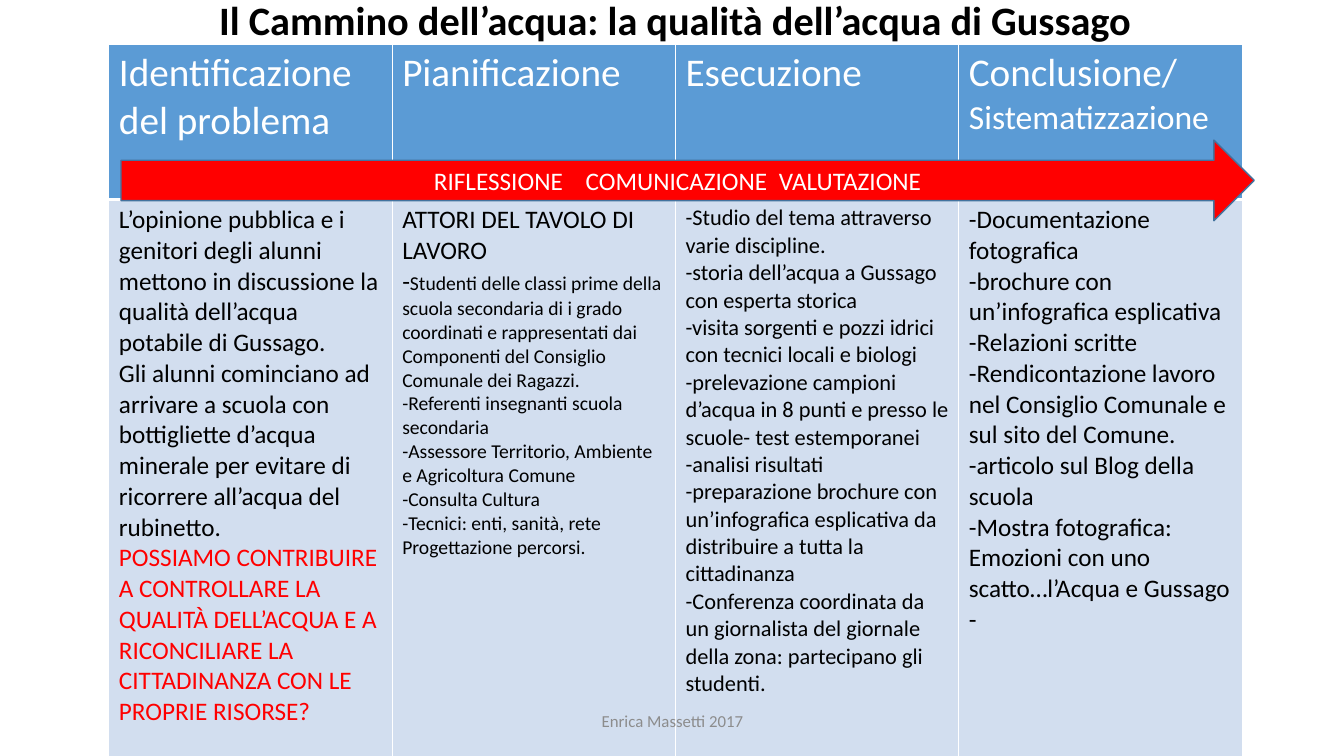
from pptx import Presentation, util as u
from pptx.dml.color import RGBColor
from pptx.enum import shapes, text
from pptx.oxml.ns import qn
from lxml import etree

# Content: a paragraph is a list of (words, size, colour) runs
TITLE = "Il Cammino dell’acqua: la qualità dell’acqua di Gussago"
FOOT = "Enrica Massetti 2017"
# Arrow words, each with the extra points of space after it
STEPS = [("RIFLESSIONE", 12.2), ("COMUNICAZIONE", 4.1), ("VALUTAZIONE", 0)]
HEADS = [
    [("Identificazione del problema", 28)],
    [("Pianificazione", 28)],
    [("Esecuzione", 28)],
    [("Conclusione/", 28), ("Sistematizzazione", 24)],
]
ISSUE = [
    "L’opinione pubblica e i genitori degli alunni mettono in discussione la qualità dell’acqua potabile di Gussago.",
    "Gli alunni cominciano ad arrivare a scuola con bottigliette d’acqua minerale per evitare di ricorrere all’acqua del rubinetto.",
]
ASK = "POSSIAMO CONTRIBUIRE A CONTROLLARE LA QUALITÀ DELL’ACQUA E A RICONCILIARE LA CITTADINANZA CON LE PROPRIE RISORSE?"
ACTORS = "ATTORI DEL TAVOLO DI LAVORO"
PUPILS = "Studenti delle classi prime della scuola secondaria di i grado coordinati e rappresentati dai Componenti del Consiglio Comunale dei Ragazzi."
PLAN = [
    "-Referenti insegnanti scuola secondaria",
    "-Assessore Territorio, Ambiente e Agricoltura Comune",
    "-Consulta Cultura",
    "-Tecnici: enti, sanità, rete",
    "Progettazione percorsi.",
]
WORK = [
    "-Studio del tema attraverso varie discipline.",
    "-storia dell’acqua a Gussago con esperta storica",
    "-visita sorgenti e pozzi idrici con tecnici locali e biologi",
    "-prelevazione campioni d’acqua in 8 punti e presso le scuole- test estemporanei",
    "-analisi risultati",
    "-preparazione brochure con un’infografica esplicativa da distribuire a tutta la cittadinanza",
    "-Conferenza coordinata da un giornalista del giornale della zona: partecipano gli studenti.",
]
CLOSE = [
    "-Documentazione fotografica",
    "-brochure con un’infografica esplicativa -Relazioni scritte",
    "-Rendicontazione lavoro nel Consiglio Comunale e sul sito del Comune.",
    "-articolo sul Blog della scuola",
    "-Mostra fotografica: Emozioni con uno scatto…l’Acqua e Gussago",
    "-",
]
HUES = {"white": "FFFFFF", "black": "000000", "red": "FF0000", "head": "5B9BD5",
        "body": "D2DEEF", "edge": "43739E", "grey": "8C8C8C"}
FONT = "Calibri"
LEFT, TOP, COL = 1.08, 0.44, 2.81
ROWS = [1.54, 5.8]


def rgb(hue):
    return RGBColor.from_string(HUES[hue])


def paint(fill, hue):
    fill.solid()
    fill.fore_color.rgb = rgb(hue)


def add_run(para, words, size, hue, bold=False):
    run = para.add_run()
    run.text = words
    run.font.name, run.font.size, run.font.bold = FONT, u.Pt(size), bold
    run.font.color.rgb = rgb(hue)
    return run


def fill_text(frame, paras):
    for i, runs in enumerate(paras):
        para = frame.add_paragraph() if i else frame.paragraphs[0]
        for run in runs:
            add_run(para, *run)


def plain(lines, size):
    return [[(line, size, "black")] for line in lines]


def center(frame):
    frame.word_wrap = True
    frame.vertical_anchor = text.MSO_ANCHOR.MIDDLE
    frame.paragraphs[0].alignment = text.PP_ALIGN.CENTER
    return frame.paragraphs[0]


def add_label(box, *run):
    para = center(page.shapes.add_textbox(*map(u.Inches, box)).text_frame)
    add_run(para, *run)
    return para


def add_edges(cell, low):
    props = cell._tc.get_or_add_tcPr()
    for side, width in zip("LRTB", (1, 1, 1, low)):
        line = etree.SubElement(props, qn("a:ln" + side), w=str(u.Pt(width)))
        solid = etree.SubElement(line, qn("a:solidFill"))
        etree.SubElement(solid, qn("a:srgbClr"), val=HUES["white"])


deck = Presentation()
deck.slide_width, deck.slide_height = u.Inches(13.33), u.Inches(7.5)
page = deck.slides.add_slide(deck.slide_layouts[6])

# Title
add_label((1.2, 0, 11, 0.44), TITLE, 28.8, "black", True).line_spacing = 0.9

# Table of the four phases
heads = [[[(words, size, "white")] for words, size in head] for head in HEADS]
bodies = [
    plain(ISSUE, 18) + [[(ASK, 18, "red")]],
    plain([ACTORS], 18) + [[("-", 18, "black"), (PUPILS, 14, "black")]] + plain(PLAN, 14),
    plain(WORK, 16),
    plain(CLOSE, 18),
]
size = (LEFT, TOP, COL * len(HEADS), sum(ROWS))
grid = page.shapes.add_table(len(ROWS), len(HEADS), *map(u.Inches, size)).table
grid.first_row = grid.horz_banding = False
for col in grid.columns:
    col.width = u.Inches(COL)
for r, (cells, hue, low) in enumerate([(heads, "head", 3), (bodies, "body", 1)]):
    grid.rows[r].height = u.Inches(ROWS[r])
    for c, paras in enumerate(cells):
        cell = grid.cell(r, c)
        add_edges(cell, low)
        paint(cell.fill, hue)
        fill_text(cell.text_frame, paras)

# Arrow across the phases
arrow = page.shapes.add_shape(shapes.MSO_SHAPE.RIGHT_ARROW,
                              *map(u.Inches, (1.2, 1.39, 11.24, 0.8)))
arrow.shadow.inherit = False
paint(arrow.fill, "red")
arrow.line.color.rgb, arrow.line.width = rgb("edge"), u.Pt(1)
para = center(arrow.text_frame)
for word, gap in STEPS:
    add_run(para, word, 18, "white")
    if gap:
        space = add_run(para, " ", 18, "white")
        space.font._element.set("spc", str(round(gap * 100)))

# Footer
add_label((4.42, 6.95, 4.5, 0.4), FOOT, 12, "grey")

deck.save("out.pptx")
